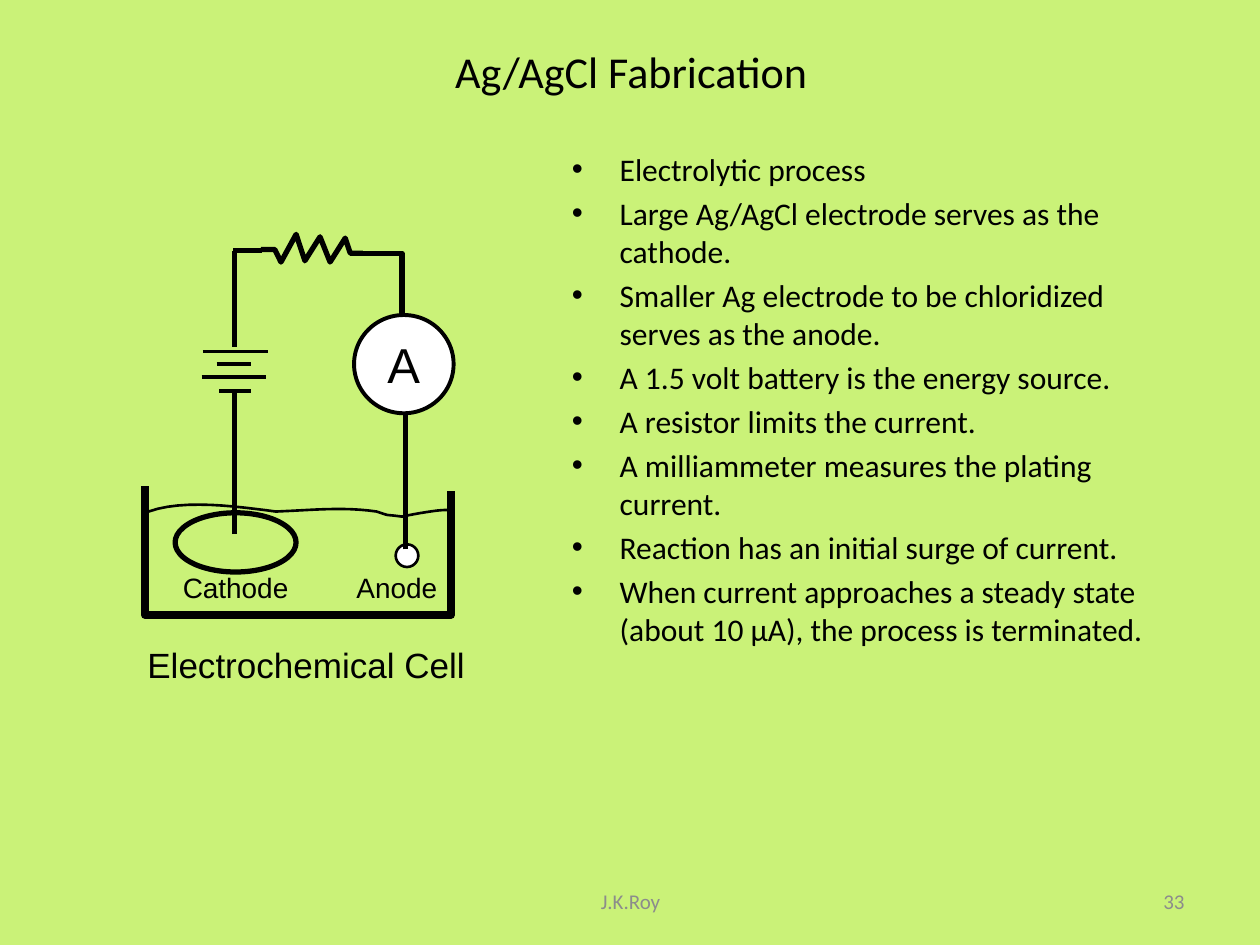
from lxml import etree
from pptx import Presentation
from pptx import util as u
from pptx.dml.color import RGBColor
from pptx.enum import shapes as s, text as t
from pptx.oxml.ns import qn

LIME = RGBColor(0xCA, 0xF2, 0x78)
BLACK = RGBColor(0, 0, 0)
WHITE = RGBColor(0xFF, 0xFF, 0xFF)
GREY = RGBColor(0x8C, 0x8C, 0x8C)

COLUMNS, ROWS = 100, 75
UNIT = u.Inches(10) // COLUMNS

STEPS = [
    "Electrolytic process",
    "Large Ag/AgCl electrode serves as the cathode.",
    "Smaller Ag electrode to be chloridized serves as the anode.",
    "A 1.5 volt battery is the energy source.",
    "A resistor limits the current.",
    "A milliammeter measures the plating current.",
    "Reaction has an initial surge of current.",
    "When current approaches a steady state (about 10 µA), the process is terminated.",
]

# Cell geometry, in grid units from the corner of its box
TANK = [(0.5, 20.6), (0.5, 30.8), (24.8, 30.8), (24.8, 21)]
SURFACE_START = (0.8, 22.6)
SURFACE_CURVES = [
    [(3.6, 21.6), (7.8, 22.2), (10.9, 22.6)],
    [(13.6, 22.5), (16.2, 22.2), (18.9, 22.6)],
    [(20.1, 23), (19.4, 22.8), (20.9, 23)],
    [(21.4, 22.9), (25.3, 22.1), (24.7, 22.7)],
]
RESISTOR = [(9.7, 1.8), (10.8, 1.8), (11.3, 2.8), (12.5, 0.6), (13.2, 2.7),
            (14.4, 0.8), (15.2, 2.8), (16.4, 0.9), (16.8, 2.1), (17.8, 2.1)]
AMMETER_LEAD = [(16.9, 2.1), (20.9, 2.1), (20.9, 7)]
BATTERY_PLATES = [(5.1, 10.3, 9.9), (6.2, 8.9, 10.9), (5, 10.1, 11.9), (6.4, 8.9, 13)]
WIRES = [
    ((7.6, 24.4), (7.6, 13)),
    ((7.6, 9.5), (7.6, 1.9)),
    ((21.2, 25.6), (21.2, 14.9)),
    ((7.5, 1.9), (9.8, 1.9)),
]


def grid(*lengths):
    return [round(length * UNIT) for length in lengths]


def write(frame, *paragraphs, size=18, font="Calibri", color=BLACK, bullet=False,
          align=t.PP_ALIGN.CENTER, anchor=t.MSO_ANCHOR.MIDDLE, wrap=True):
    frame.word_wrap = wrap
    frame.vertical_anchor = anchor
    for index, words in enumerate(paragraphs):
        paragraph = frame.paragraphs[0] if index == 0 else frame.add_paragraph()
        paragraph.alignment = align
        run = paragraph.add_run()
        run.text = words
        run.font.size, run.font.name = u.Pt(size), font
        run.font.color.rgb = color
        if bullet:
            paragraph.space_before = u.Pt(0.2 * size)
            properties = paragraph._p.get_or_add_pPr()
            indent = u.Inches(0.38)
            properties.set("marL", str(indent))
            properties.set("indent", str(-indent))
            etree.SubElement(properties, qn("a:buFont")).set("typeface", "Arial")
            etree.SubElement(properties, qn("a:buChar")).set("char", "•")


def label(slide, box, *paragraphs, **format):
    write(slide.shapes.add_textbox(*grid(*box)).text_frame, *paragraphs, **format)


def stroke(shape, weight):
    shape.line.color.rgb = BLACK
    shape.line.width = u.Pt(weight)


def wire(slide, start, end, weight=3):
    connector = slide.shapes.add_connector(
        s.MSO_CONNECTOR.STRAIGHT, *grid(*start), *grid(*end))
    stroke(connector, weight)
    etree.SubElement(connector._element.spPr, qn("a:effectLst"))


def outline(slide, points, weight=3):
    first, *rest = [grid(*point) for point in points]
    builder = slide.shapes.build_freeform(*first)
    builder.add_line_segments(rest, close=False)
    shape = builder.convert_to_shape()
    shape.fill.background()
    shape.shadow.inherit = False
    stroke(shape, weight)


def ellipse(slide, box, fill, weight):
    shape = slide.shapes.add_shape(s.MSO_SHAPE.OVAL, *grid(*box))
    shape.fill.solid()
    shape.fill.fore_color.rgb = fill
    shape.shadow.inherit = False
    stroke(shape, weight)
    return shape


def curve_points(start, curves, steps=12):
    """Points along a chain of cubic Bézier curves."""
    points = [start]
    for b, c, d in curves:
        a = points[-1]
        for step in range(1, steps + 1):
            k = step / steps
            weights = ((1 - k) ** 3, 3 * k * (1 - k) ** 2, 3 * k * k * (1 - k), k ** 3)
            points.append(tuple(sum(w * p for w, p in zip(weights, axis))
                                for axis in zip(a, b, c, d)))
    return points


def electrochemical_cell(slide, left, top):
    def at(point):
        return left + point[0], top + point[1]

    def box(x, y, width, height):
        return left + x, top + y, width, height

    outline(slide, map(at, TANK), 4.5)
    outline(slide, map(at, curve_points(SURFACE_START, SURFACE_CURVES)), 1.5)
    ellipse(slide, box(2.9, 22.7, 9.6, 4.7), LIME, 3)
    ellipse(slide, box(20.4, 25.2, 1.8, 1.8), WHITE, 1.5)
    for name, x in (("Cathode", 0.7), ("Anode", 13.5)):
        label(slide, box(x, 26.8, 14, 3.7), name, size=16, font="Arial")

    ammeter = ellipse(slide, box(17.1, 7, 7.9, 7.8), WHITE, 2.25)
    write(ammeter.text_frame, "A", size=28, font="Arial", wrap=False)
    outline(slide, map(at, RESISTOR))
    outline(slide, map(at, AMMETER_LEAD))
    for x1, x2, y in BATTERY_PLATES:
        wire(slide, at((x1, y)), at((x2, y)), 2.25)
    for start, end in WIRES:
        wire(slide, at(start), at(end))
    label(slide, box(-1.3, 32.6, 29.2, 4.3), "Electrochemical Cell",
          size=20, font="Arial")


def footer(slide, top, height):
    label(slide, (34.2, top, 31.7, height), "J.K.Roy", size=12, color=GREY)
    label(slide, (71.7, top, 23.3, height), "33", size=12, color=GREY,
          align=t.PP_ALIGN.RIGHT)


def main():
    deck = Presentation()
    deck.slide_width, deck.slide_height = grid(COLUMNS, ROWS)
    slide = deck.slides.add_slide(deck.slide_layouts[6])
    slide.background.fill.solid()
    slide.background.fill.fore_color.rgb = LIME

    label(slide, (7.6, 3.5, 85, 4.3), "Ag/AgCl Fabrication", size=25.2)
    label(slide, (44.4, 11.4, 48, 51.7), *STEPS, bullet=True,
          align=t.PP_ALIGN.LEFT, anchor=t.MSO_ANCHOR.TOP)
    electrochemical_cell(slide, 11, 18)
    footer(slide, 69.5, 4)
    deck.save("out.pptx")


if __name__ == "__main__":
    main()
